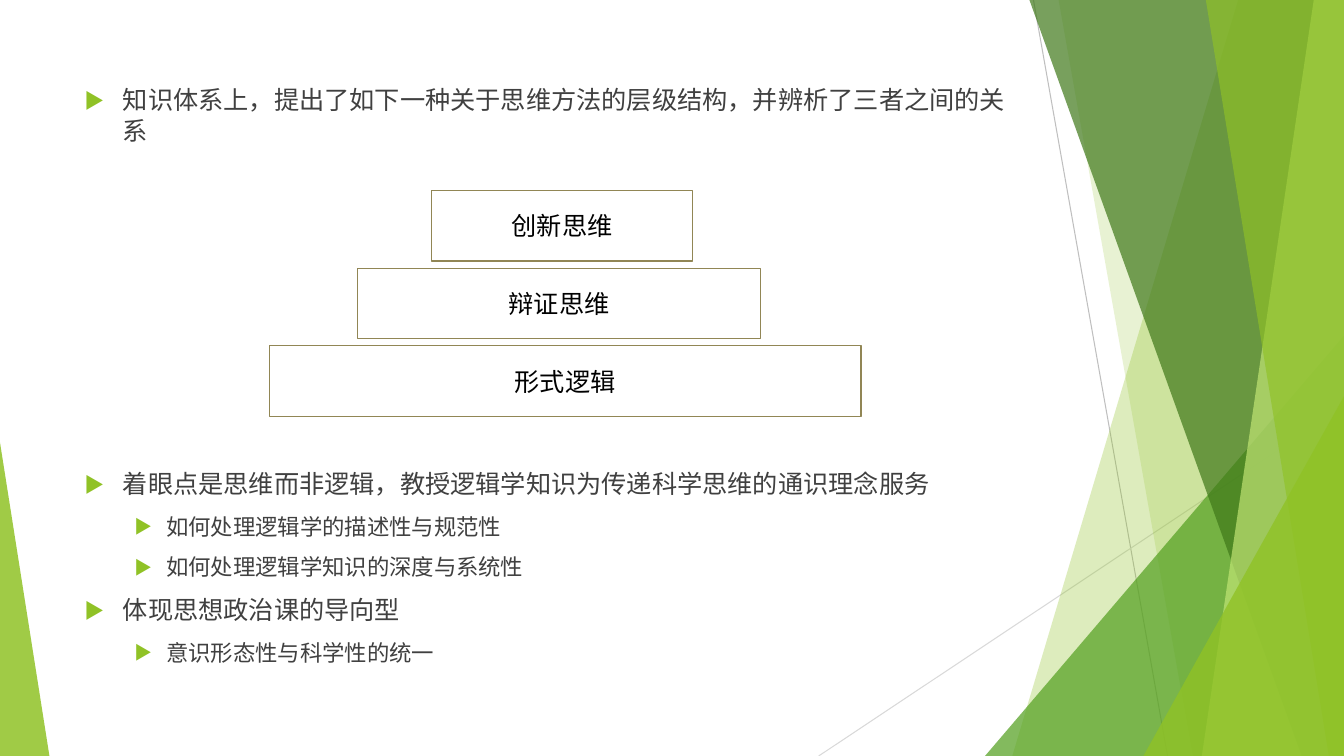
"""Build a slide on the three-level hierarchy of thinking methods."""
import pptx
import pptx.util
import pptx.dml.color
import pptx.enum.shapes
import pptx.enum.text
import pptx.oxml
import pptx.oxml.ns
from lxml import etree

Inches, Pt = pptx.util.Inches, pptx.util.Pt
RGB = pptx.dml.color.RGBColor
KIND = pptx.enum.shapes.MSO_SHAPE
LIME = RGB(0x90, 0xC2, 0x26)
GREEN = RGB(0x54, 0xA0, 0x21)
DARK = RGB(0x3F, 0x78, 0x19)
PALE = RGB(0xC0, 0xE4, 0x74)
SILVER = RGB(0xBF, 0xBF, 0xBF)
LIGHT = RGB(0xD9, 0xD9, 0xD9)
GREY = RGB(0x40, 0x40, 0x40)
BLACK = RGB(0, 0, 0)
OLIVE = RGB(0x91, 0x86, 0x55)
CJK = "Noto Sans CJK SC"
WIDE, HIGH = 13.33, 7.5

POINTS = [
    (0, 10, "知识体系上，提出了如下一种关于思维方法的层级结构，并辨析了三者之间的关系"),
    (0, 231, "着眼点是思维而非逻辑，教授逻辑学知识为传递科学思维的通识理念服务"),
    (1, 10, "如何处理逻辑学的描述性与规范性"),
    (1, 10, "如何处理逻辑学知识的深度与系统性"),
    (0, 10, "体现思想政治课的导向型"),
    (1, 10, "意识形态性与科学性的统一"),
]
LEVELS = [(18, 0.38, 0.38), (16, 0.81, 0.31)]
TIERS = [("形式逻辑", 2.67, 3.43, 5.87), ("辩证思维", 3.55, 2.66, 3.99), ("创新思维", 4.28, 1.89, 2.59)]
TALL = 0.7
RULES = [(10.25, 0, 11.58, HIGH, SILVER), (WIDE, 4.03, 8.12, HIGH, LIGHT)]
FACETS = [
    ("band", 12.28, 10.04, LIME, 30),
    ("band", 10.5, 11.83, LIME, 20),
    ("wedge", 9.77, 3.33, 3.56, 1, GREEN, 72),
    ("band", 10.21, 12.91, DARK, 70),
    ("band", 13.03, 11.92, PALE, 70),
    ("band", 11.96, 13.18, LIME, 65),
    ("wedge", 11.34, 3.93, 1.99, 1, LIME, 80),
    ("wedge", 0, 4.39, 0.49, 0, LIME, 85),
]


def sub(node, tag, **attrs):
    return etree.SubElement(node, pptx.oxml.ns.qn(tag), **attrs)


def write(par, text, size, color, font):
    run = par.add_run()
    run.text = text
    run.font.size, run.font.name = Pt(size), font
    run.font.color.rgb = color
    sub(run.font._element, "a:ea", typeface=CJK)


def bullet(par, left, hang):
    props = par._p.get_or_add_pPr()
    props.set("marL", str(Inches(left)))
    props.set("indent", str(-Inches(hang)))
    sub(sub(props, "a:buClr"), "a:srgbClr", val=str(LIME))
    sub(props, "a:buSzPct", val="80000")
    sub(props, "a:buFont", typeface=CJK)
    sub(props, "a:buChar", char="▶")


def tint(shape, color, alpha):
    shape.shadow.inherit = False
    shape.fill.solid()
    shape.fill.fore_color.rgb = color
    shape.line.fill.background()
    shade = shape._element.spPr.find(".//" + pptx.oxml.ns.qn("a:srgbClr"))
    sub(shade, "a:alpha", val=str(alpha * 1000))


def band(shapes, top, foot):
    path = shapes.build_freeform(Inches(top), 0)
    ends = [(WIDE, 0), (WIDE, HIGH), (foot, HIGH)]
    path.add_line_segments([(Inches(x), Inches(y)) for x, y in ends])
    return path.convert_to_shape()


def wedge(shapes, left, top, width, peak):
    box = map(Inches, (left, top, width, HIGH - top))
    shape = shapes.add_shape(KIND.ISOSCELES_TRIANGLE, *box)
    shape.adjustments[0] = peak
    return shape


def main():
    deck = pptx.Presentation()
    deck.slide_width, deck.slide_height = Inches(WIDE), Inches(HIGH)
    shapes = deck.slides.add_slide(deck.slide_layouts[6]).shapes

    for *ends, color in RULES:
        rule = shapes.add_connector(pptx.enum.shapes.MSO_CONNECTOR.STRAIGHT, *map(Inches, ends))
        rule.line.color.rgb, rule.line.width = color, Pt(0.75)
        sub(rule._element.spPr, "a:effectLst")

    draw = {"band": band, "wedge": wedge}
    for kind, *place, color, alpha in FACETS:
        tint(draw[kind](shapes, *place), color, alpha)

    frame = shapes.add_textbox(*map(Inches, (0.74, 0.79, 9.4, 6.13))).text_frame
    frame.word_wrap = True
    for i, (level, gap, text) in enumerate(POINTS):
        par = frame.add_paragraph() if i else frame.paragraphs[0]
        size, left, hang = LEVELS[level]
        par.level, par.space_before = level, Pt(gap)
        bullet(par, left, hang)
        write(par, text, size, GREY, CJK)

    for text, left, top, width in TIERS:
        tier = shapes.add_shape(KIND.RECTANGLE, *map(Inches, (left, top, width, TALL)))
        tier.shadow.inherit = False
        tier.fill.background()
        tier.line.color.rgb, tier.line.width = OLIVE, Pt(0.75)
        tier.text_frame.vertical_anchor = pptx.enum.text.MSO_ANCHOR.MIDDLE
        par = tier.text_frame.paragraphs[0]
        par.alignment = pptx.enum.text.PP_ALIGN.CENTER
        write(par, text, 18, BLACK, "Lato")

    deck.save("out.pptx")


if __name__ == "__main__":
    main()
